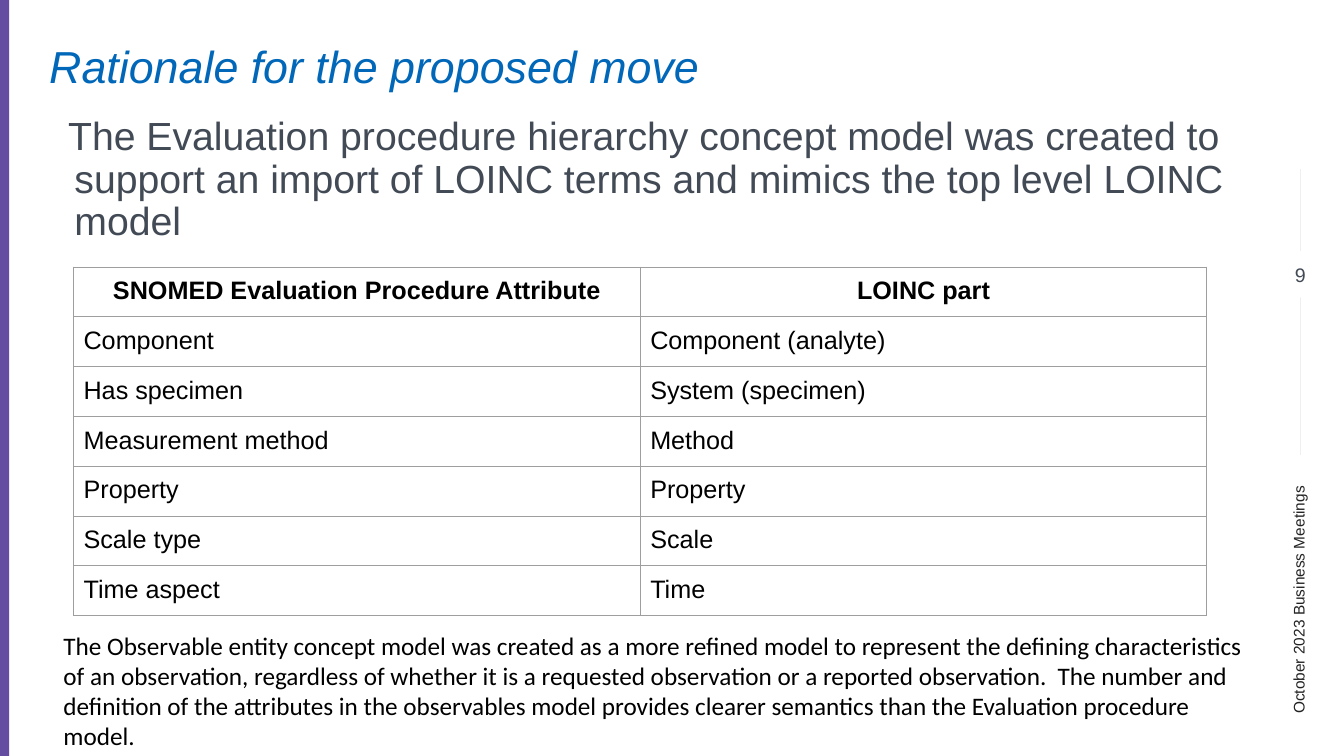
from lxml import etree
from pptx import Presentation
from pptx.dml.color import RGBColor
from pptx.enum.shapes import MSO_CONNECTOR, MSO_SHAPE
from pptx.enum.text import MSO_ANCHOR, PP_ALIGN
from pptx.oxml.ns import qn
from pptx.util import Pt

WHITE = RGBColor(0xFF, 0xFF, 0xFF)
BLACK = RGBColor(0x00, 0x00, 0x00)
PURPLE = RGBColor(0x65, 0x4E, 0xA2)
BLUE = RGBColor(0x01, 0x67, 0xB9)
SLATE = RGBColor(0x42, 0x4A, 0x55)
CHARCOAL = RGBColor(0x22, 0x22, 0x22)
PALE = RGBColor(0xEF, 0xEF, 0xEF)
BORDER = RGBColor(0x9E, 0x9E, 0x9E)

ATTRIBUTES = [
    ("SNOMED Evaluation Procedure Attribute", "LOINC part"),
    ("Component", "Component (analyte)"),
    ("Has specimen", "System (specimen)"),
    ("Measurement method", "Method"),
    ("Property", "Property"),
    ("Scale type", "Scale"),
    ("Time aspect", "Time"),
]
INTRO = ("The Evaluation procedure hierarchy concept model was created to "
         "support an import of LOINC terms and mimics the top level LOINC model")
NOTE = ("The Observable entity concept model was created as a more refined model to "
        "represent the defining characteristics of an observation, regardless of "
        "whether it is a requested observation or a reported observation.  The number "
        "and definition of the attributes in the observables model provides clearer "
        "semantics than the Evaluation procedure model.")


def write(tf, text, size, color, font="Arial", inset=3.6):
    tf.word_wrap = True
    tf.margin_left = tf.margin_right = Pt(7.2)
    tf.margin_top = tf.margin_bottom = Pt(inset)
    p = tf.paragraphs[0]
    p.text = text
    p.font.size = Pt(size)
    p.font.name = font
    p.font.color.rgb = color
    return p


def add_text(slide, x, y, w, h, text, size, color, **style):
    sp = slide.shapes.add_textbox(Pt(x), Pt(y), Pt(w), Pt(h))
    return sp, write(sp.text_frame, text, size, color, **style)


def add_rect(slide, x, y, w, h, color):
    sp = slide.shapes.add_shape(MSO_SHAPE.RECTANGLE, Pt(x), Pt(y), Pt(w), Pt(h))
    sp.shadow.inherit = False
    sp.fill.solid()
    sp.fill.fore_color.rgb = color
    sp.line.fill.background()
    return sp


def add_side_rail(slide, x, y, w, h):
    mid = x + w / 2
    line = slide.shapes.add_connector(
        MSO_CONNECTOR.STRAIGHT, Pt(mid), Pt(y + 204), Pt(mid), Pt(y))
    line.line.color.rgb = PALE
    line.line.width = Pt(0.75)
    etree.SubElement(line._element.spPr, qn("a:effectLst"))

    length, depth = 247, 20.8
    sp, p = add_text(slide, mid - 1 - length / 2, y + h - length / 2 - depth / 2,
                     length, depth, "October 2023 Business Meetings", 11, CHARCOAL)
    sp.rotation = 270

    number = add_rect(slide, x, y + 58.3, w, w, WHITE)
    number.text_frame.vertical_anchor = MSO_ANCHOR.MIDDLE
    p = write(number.text_frame, "9", 14, SLATE)
    p.alignment = PP_ALIGN.CENTER


def add_heading(slide, x, y, w):
    sp, p = add_text(slide, x, y, w, 42.5, "Rationale for the proposed move", 32, BLUE)
    p.line_spacing = 0.9
    p.font.italic = True

    sp, p = add_text(slide, x, y + 51.8, w + 68.4, 103, INTRO, 28, SLATE)
    p.line_spacing = 0.9
    pPr = p._p.get_or_add_pPr()
    pPr.set("marL", str(Pt(18)))
    pPr.set("indent", str(Pt(-4.5)))


def set_borders(cell):
    tcPr = cell._tc.get_or_add_tcPr()
    for i, side in enumerate(("lnL", "lnR", "lnT", "lnB")):
        ln = etree.Element(qn(f"a:{side}"), w=str(Pt(0.75)))
        fill = etree.SubElement(ln, qn("a:solidFill"))
        etree.SubElement(fill, qn("a:srgbClr"), val=str(BORDER))
        tcPr.insert(i, ln)


def add_attribute_table(slide, x, y, w, row_h):
    rows, cols = len(ATTRIBUTES), len(ATTRIBUTES[0])
    table = slide.shapes.add_table(
        rows, cols, Pt(x), Pt(y), Pt(w), Pt(row_h * rows)).table
    table.first_row = table.horz_banding = False
    for column in table.columns:
        column.width = Pt(w / cols)
    for i, row in enumerate(ATTRIBUTES):
        table.rows[i].height = Pt(row_h)
        for j, text in enumerate(row):
            cell = table.cell(i, j)
            cell.fill.background()
            cell.margin_left = cell.margin_right = Pt(7.2)
            cell.margin_top = cell.margin_bottom = Pt(7.2)
            p = write(cell.text_frame, text, 18, BLACK)
            p.font.bold = i == 0
            p.alignment = PP_ALIGN.CENTER if i == 0 else PP_ALIGN.LEFT
            cell.margin_top = cell.margin_bottom = Pt(7)
            set_borders(cell)


def main():
    prs = Presentation()
    prs.slide_width, prs.slide_height = Pt(960), Pt(540)
    slide = prs.slides.add_slide(prs.slide_layouts[6])
    add_side_rail(slide, 912.2, 121, 33.2, 396)
    add_rect(slide, 0, 0, 6.5, 540, PURPLE)
    add_heading(slide, 28.1, 28.1, 823.7)
    add_attribute_table(slide, 52.5, 190.8, 809.6, 34.5)
    add_text(slide, 38.2, 442.8, 872.6, 67, NOTE, 18, BLACK, font="Calibri", inset=7.2)
    prs.save("out.pptx")


if __name__ == "__main__":
    main()
